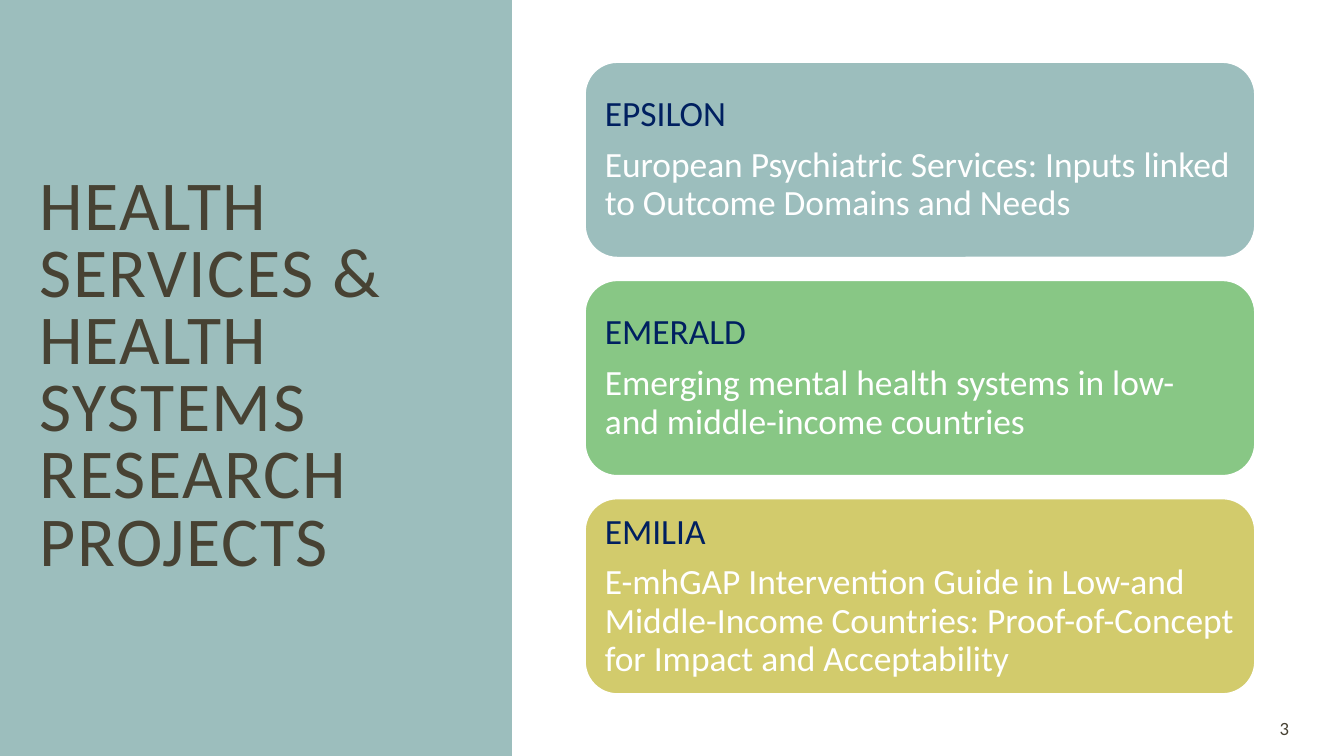
from pptx import Presentation
from pptx.dml.color import RGBColor
from pptx.enum.shapes import MSO_SHAPE
from pptx.enum.text import MSO_ANCHOR, MSO_AUTO_SIZE, PP_ALIGN
from pptx.util import Pt

RECTANGLE = MSO_SHAPE.RECTANGLE
ROUNDED = MSO_SHAPE.ROUNDED_RECTANGLE
MIDDLE = MSO_ANCHOR.MIDDLE
NO_AUTOFIT = MSO_AUTO_SIZE.NONE
LEFT = PP_ALIGN.LEFT
RIGHT = PP_ALIGN.RIGHT

TEAL = "9CBEBD"
GREEN = "88C785"
YELLOW = "D2CB6C"
BROWN = "474233"
NAVY = "002060"
WHITE = "FFFFFF"


def color(hex_code):
    return RGBColor.from_string(hex_code)


def add_run(paragraph, text, size, hex_code):
    run = paragraph.add_run()
    run.text = text
    run.font.name = "Calibri"
    run.font.size = Pt(size)
    run.font.color.rgb = color(hex_code)
    return run


presentation = Presentation()
presentation.slide_width = Pt(720)
presentation.slide_height = Pt(405)
slide = presentation.slides.add_slide(presentation.slide_layouts[5])

# Side panel with the title in front of it
panel = slide.shapes.add_shape(RECTANGLE, 0, 0, Pt(274.3), Pt(405))
panel.shadow.inherit = False
panel.fill.solid()
panel.fill.fore_color.rgb = color(TEAL)
panel.line.fill.background()

title = slide.shapes.title
title.element.addprevious(panel.element)
title.left, title.top = Pt(14), Pt(38)
title.width, title.height = Pt(249), Pt(329)
title.text_frame.auto_size = NO_AUTOFIT
title.text_frame.word_wrap = True
title.text_frame.vertical_anchor = MIDDLE
paragraph = title.text_frame.paragraphs[0]
paragraph.alignment = LEFT
paragraph.line_spacing = 0.8
title_run = add_run(paragraph, "HEALTH SERVICES & HEALTH SYSTEMS RESEARCH PROJECTS", 37.5, BROWN)
title_run._r.get_or_add_rPr().set("spc", "80")  # letter spacing, 0.8 pt

# Project cards
projects = [
    ("EPSILON", "European Psychiatric Services: Inputs linked to Outcome Domains and Needs", TEAL),
    ("EMERALD", "Emerging mental health systems in low- and middle-income countries", GREEN),
    ("EMILIA", "E-mhGAP Intervention Guide in Low-and Middle-Income Countries: "
               "Proof-of-Concept for Impact and Acceptability", YELLOW),
]
for index, (name, description, fill) in enumerate(projects):
    card = slide.shapes.add_shape(ROUNDED, Pt(313.2), Pt(33.1 + 116.9 * index), Pt(359.3), Pt(105.1))
    card.shadow.inherit = False
    card.fill.solid()
    card.fill.fore_color.rgb = color(fill)
    card.line.color.rgb = color(WHITE)
    card.line.width = Pt(1.25)
    frame = card.text_frame
    frame.word_wrap = True
    frame.vertical_anchor = MIDDLE
    frame.margin_left = frame.margin_right = Pt(5.7)
    frame.margin_top = frame.margin_bottom = Pt(5)
    lines = [(frame.paragraphs[0], name, NAVY), (frame.add_paragraph(), description, WHITE)]
    for paragraph, text, text_color in lines:
        paragraph.alignment = LEFT
        paragraph.line_spacing = 0.9
        paragraph.space_after = Pt(6.65)
        add_run(paragraph, text, 19, text_color)

# Slide number
number = slide.shapes.add_textbox(Pt(640), Pt(382), Pt(57.6), Pt(16.6))
number.text_frame.word_wrap = True
number.text_frame.vertical_anchor = MIDDLE
paragraph = number.text_frame.paragraphs[0]
paragraph.alignment = RIGHT
add_run(paragraph, "3", 10, BROWN)

presentation.save("out.pptx")
